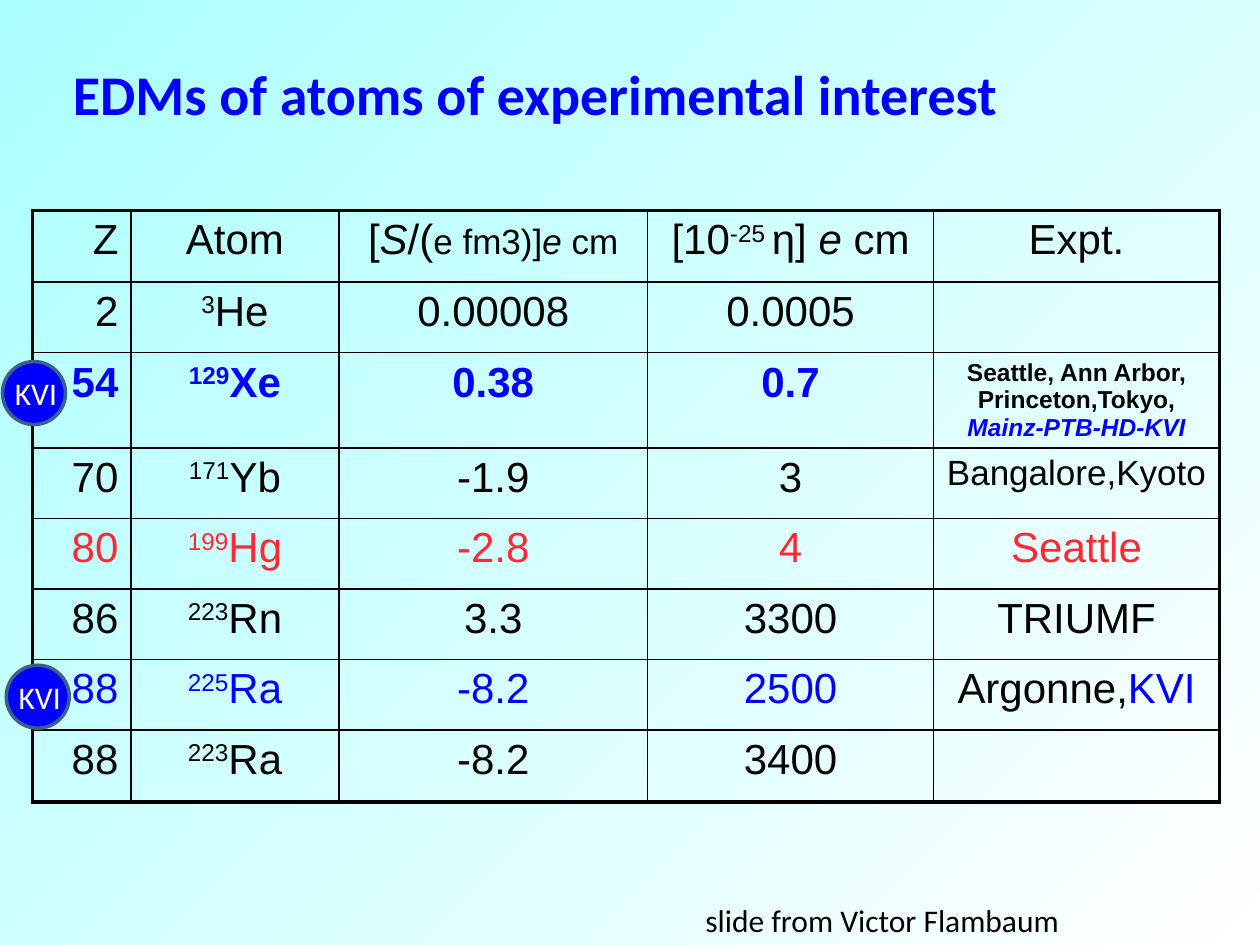
from dataclasses import dataclass

from pptx import Presentation
from pptx.dml.color import RGBColor
from pptx.enum.shapes import MSO_SHAPE as Preset
from pptx.enum.text import MSO_ANCHOR as Anchor, MSO_AUTO_SIZE as AutoSize, PP_ALIGN as Align
from pptx.oxml import parse_xml
from pptx.oxml.ns import nsdecls
from pptx.util import Inches, Pt


@dataclass(frozen=True)
class Theme:
    black: str = "000000"
    white: str = "FFFFFF"
    blue: str = "0000FF"
    red: str = "FF2833"
    cyan: str = "ABFFFF"
    badge_edge: str = "3A5F8C"
    heading_font: str = "Calibri"
    table_font: str = "Arial"
    title_size: int = 32
    cell_size: int = 24
    medium_size: int = 20
    note_size: int = 18
    small_size: int = 14
    inner_line: float = 1
    outer_line: float = 2.25


THEME = Theme()
ITALIC = {"italic": True}
RAISED = {"baseline": "30000"}
MEDIUM = {"size": THEME.medium_size}
BLACK = {"color": THEME.black}
BLUE = {"color": THEME.blue}
SMALL = {"size": THEME.small_size}

HEADER = [
    "Z",
    "Atom",
    [("[", {}), ("S", ITALIC), ("/(", {}), ("e fm3)]", MEDIUM),
     ("e", MEDIUM | ITALIC), (" cm", MEDIUM)],
    [("[10", {}), ("-25 ", RAISED), ("η] ", {}), ("e", ITALIC), (" cm", {})],
    "Expt.",
]
XENON_LABS = [("Seattle, Ann Arbor, Princeton,Tokyo, ", SMALL | BLACK),
              ("Mainz-PTB-HD-KVI", SMALL | ITALIC)]
ATOMS = [
    ("2", "3", "He", "0.00008", "0.0005", "", {}),
    ("54", "129", "Xe", "0.38", "0.7", XENON_LABS, BLUE | {"bold": True}),
    ("70", "171", "Yb", "-1.9", "3", [("Bangalore,Kyoto", MEDIUM)], {}),
    ("80", "199", "Hg", "-2.8", "4", "Seattle", {"color": THEME.red}),
    ("86", "223", "Rn", "3.3", "3300", "TRIUMF", {}),
    ("88", "225", "Ra", "-8.2", "2500", [("Argonne,", BLACK), ("KVI", {})], BLUE),
    ("88", "223", "Ra", "-8.2", "3400", "", {}),
]
COLUMN_WIDTHS = [0.78, 1.65, 2.45, 2.27, 2.27]
ROW_HEIGHTS = [0.57, 0.56, 0.75, 0.56, 0.56, 0.56, 0.56, 0.57]


class SlideBuilder:
    def __init__(self, slide, theme):
        self.slide = slide
        self.theme = theme

    def background(self):
        fill = self.slide.background.fill
        fill.gradient()
        fill.gradient_angle = 315
        for stop, color in zip(fill.gradient_stops, (self.theme.cyan, self.theme.white)):
            stop.color.rgb = RGBColor.from_string(color)

    def add_runs(self, paragraph, content, base, align=Align.LEFT):
        paragraph.alignment = align
        pieces = [(content, {})] if isinstance(content, str) else content
        for text, changes in pieces:
            if not text:
                continue
            run = paragraph.add_run()
            run.text = text
            look = base | changes
            run.font.size = Pt(look["size"])
            run.font.color.rgb = RGBColor.from_string(look["color"])
            for key in ("name", "bold", "italic"):
                setattr(run.font, key, look.get(key, False))
            if "baseline" in look:
                run.font._element.set("baseline", look["baseline"])

    def title(self, text, left, top, width, height):
        heading = self.slide.shapes.title
        place = {"left": left, "top": top, "width": width, "height": height}
        for key, value in place.items():
            setattr(heading, key, Inches(value))
        frame = heading.text_frame
        frame.auto_size = AutoSize.NONE
        frame.vertical_anchor = Anchor.TOP
        look = {"name": self.theme.heading_font, "size": self.theme.title_size,
                "color": self.theme.blue, "bold": True}
        self.add_runs(frame.paragraphs[0], text, look, Align.CENTER)

    def label(self, text, left, top, width, height, color, shapes=None):
        owner = self.slide.shapes if shapes is None else shapes
        box = owner.add_textbox(*map(Inches, (left, top, width, height)))
        box.text_frame.word_wrap = False
        look = {"name": self.theme.heading_font, "size": self.theme.note_size, "color": color}
        self.add_runs(box.text_frame.paragraphs[0], text, look)

    def badge(self, text, left, top, diameter=0.5):
        group = self.slide.shapes.add_group_shape()
        disc = group.shapes.add_shape(
            Preset.OVAL, *map(Inches, (left, top, diameter, diameter)))
        disc.shadow.inherit = False
        disc.fill.solid()
        disc.fill.fore_color.rgb = RGBColor.from_string(self.theme.blue)
        disc.line.color.rgb = RGBColor.from_string(self.theme.badge_edge)
        disc.line.width = Pt(2)
        self.label(text, left, top + 0.05, 0.54, 0.4, self.theme.white, group.shapes)

    def borders(self, cell, outer_sides):
        properties = cell._tc.get_or_add_tcPr()
        for side in "LRTB":
            weight = self.theme.outer_line if side in outer_sides else self.theme.inner_line
            properties.append(parse_xml(
                f'<a:ln{side} {nsdecls("a")} w="{Pt(weight)}"><a:solidFill>'
                f'<a:srgbClr val="{self.theme.black}"/></a:solidFill></a:ln{side}>'))

    def table(self, rows, left, top, widths, heights):
        frame = self.slide.shapes.add_table(
            len(heights), len(widths),
            *map(Inches, (left, top, sum(widths), sum(heights))))
        grid = frame.table
        grid.first_row = grid.horz_banding = False
        for column, width in zip(grid.columns, widths):
            column.width = Inches(width)
        for row, height in zip(grid.rows, heights):
            row.height = Inches(height)
        base = {"name": self.theme.table_font, "size": self.theme.cell_size,
                "color": self.theme.black}
        last_row, last_column = len(heights) - 1, len(widths) - 1
        for r, (contents, row_look) in enumerate(rows):
            for c, content in enumerate(contents):
                cell = grid.cell(r, c)
                edges = {"L": c == 0, "R": c == last_column, "T": r == 0, "B": r == last_row}
                self.borders(cell, [side for side, outer in edges.items() if outer])
                cell.fill.background()
                align = Align.RIGHT if c == 0 else Align.CENTER
                self.add_runs(cell.text_frame.paragraphs[0], content, base | row_look, align)


def main():
    deck = Presentation()
    deck.slide_width, deck.slide_height = Inches(10), Inches(7.5)
    page = SlideBuilder(deck.slides.add_slide(deck.slide_layouts[5]), THEME)
    page.background()
    page.title("EDMs of atoms of experimental interest", 0, 0.42, 8.5, 1)
    rows = [(HEADER, {})]
    for charge, mass, symbol, schiff, eta, labs, look in ATOMS:
        isotope = [(mass, RAISED), (symbol, {})]
        rows.append(([charge, isotope, schiff, eta, labs], look))
    page.table(rows, 0.26, 1.67, COLUMN_WIDTHS, ROW_HEIGHTS)
    page.label("slide from Victor Flambaum", 5.5, 7.1, 3.27, 0.4, THEME.black)
    for left, top in ((0.05, 5.28), (0.02, 2.87)):
        page.badge("KVI", left, top)
    deck.save("out.pptx")


if __name__ == "__main__":
    main()
